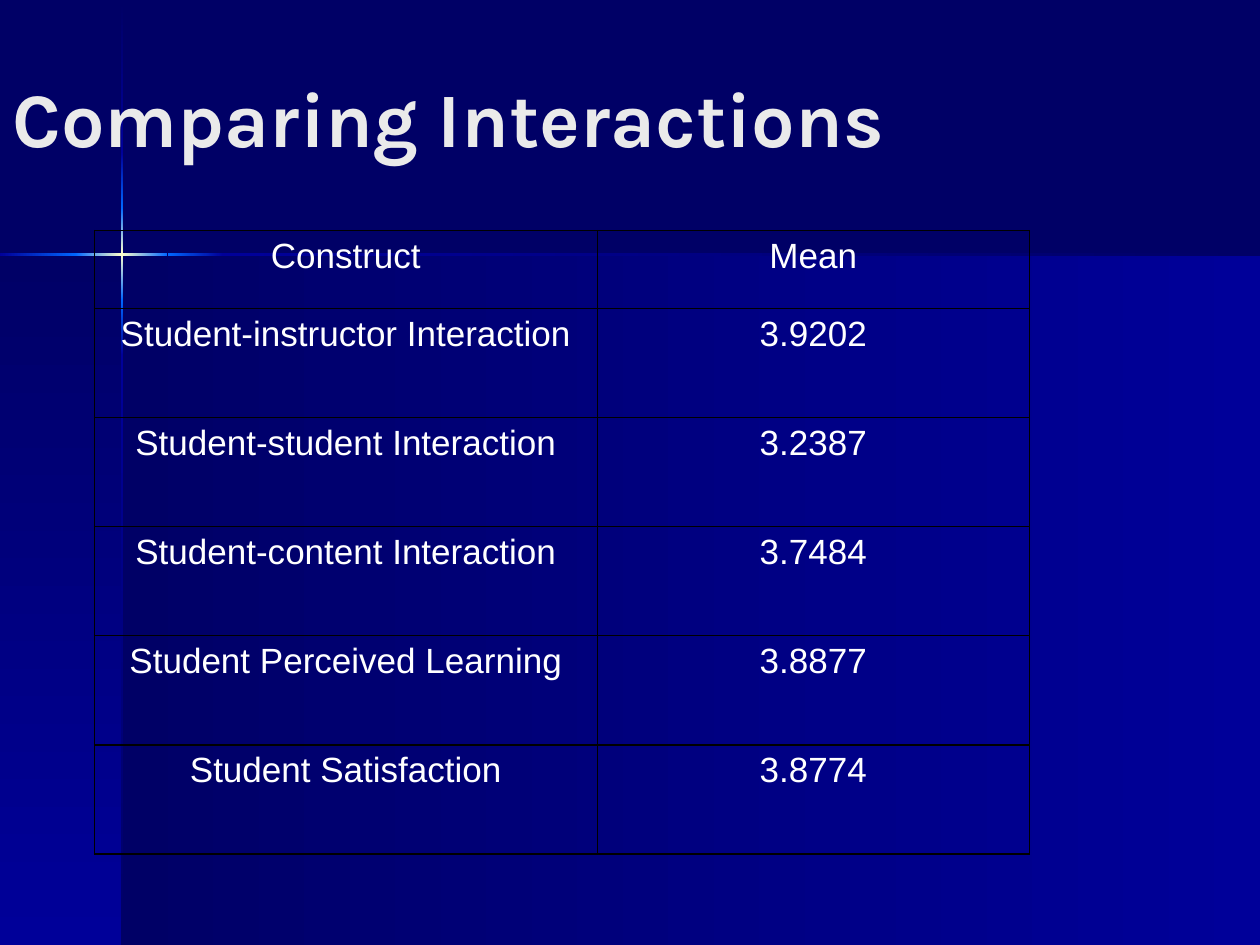
import copy
import pptx
import pptx.util
import pptx.dml.color
import pptx.enum.shapes
import pptx.enum.text
import pptx.oxml
import pptx.oxml.ns

Inches, Pt = pptx.util.Inches, pptx.util.Pt
RGB = pptx.dml.color.RGBColor

NAVY = RGB(0x00, 0x00, 0x66)
BLUE = RGB(0x00, 0x00, 0x99)
BRIGHT = RGB(0x00, 0x66, 0xFF)
GLOW = RGB(0xFF, 0xFF, 0xCC)
PALE = RGB(0xEA, 0xEA, 0xEA)
WHITE = RGB(0xFF, 0xFF, 0xFF)
BLACK = RGB(0x00, 0x00, 0x00)

TITLE = "Comparing Interactions"
ROWS = [
    ("Construct", "Mean"),
    ("Student-instructor Interaction", "3.9202"),
    ("Student-student Interaction", "3.2387"),
    ("Student-content Interaction", "3.7484"),
    ("Student Perceived Learning", "3.8877"),
    ("Student Satisfaction", "3.8774"),
]

WIDTH, HEIGHT = 10, 7.5
CROSS_X, CROSS_Y, BEAM = 0.97, 2.02, 0.02
VERTICAL_BEAM = [
    (0.01, 1.21, (NAVY, BLUE)),
    (2.82, HEIGHT, (BLUE, NAVY)),
    (2.38, 2.82, (BRIGHT, BLUE)),
    (1.21, 1.65, (BLUE, BRIGHT)),
    (1.65, 2.38, (BRIGHT, GLOW, BRIGHT)),
]
HORIZONTAL_BEAM = [
    (1.77, WIDTH, (BLUE, NAVY)),
    (0, 0.61, (BLUE, BRIGHT)),
    (1.33, 1.77, (BRIGHT, BLUE)),
    (0.6, 1.33, (BRIGHT, GLOW, BRIGHT)),
]

TABLE_LEFT, TABLE_TOP, TABLE_HEIGHT = 0.75, 1.83, 4.95
COLUMNS = [3.99, 3.43]
HEADER_HEIGHT = 0.62
BODY_HEIGHT = (TABLE_HEIGHT - HEADER_HEIGHT) / (len(ROWS) - 1)
HANGING = 0.38
SIDE_LINE = 0.75
ROW_LINES = [1, 1] + [0.75] * (len(ROWS) - 2) + [1]

TITLE_FONT = {"name": "Karla", "size": Pt(44), "bold": True}
CELL_FONT = {"name": "Arial", "size": Pt(20), "bold": False}


def format_run(r, values, color):
    for name, value in values.items():
        setattr(r.font, name, value)
    r.font.color.rgb = color


def add_gradient(s, box, colors, downward):
    sp = s.shapes.add_shape(
        pptx.enum.shapes.MSO_SHAPE.RECTANGLE, *map(Inches, box))
    sp.shadow.inherit = False
    sp.line.fill.background()
    sp.fill.gradient()
    stops = sp._element.xpath(".//a:gsLst")[0]
    while len(stops) < len(colors):
        stops.append(copy.deepcopy(stops[0]))
    for i, (stop, color) in enumerate(zip(sp.fill.gradient_stops, colors)):
        stop.color.rgb = color
        stop.position = i / (len(colors) - 1)
    sp.fill.gradient_angle = 270 if downward else 0


def add_border(cell, side, width):
    ns = pptx.oxml.ns.nsdecls("a")
    line = pptx.oxml.parse_xml(
        f'<a:{side} {ns} w="{Pt(width)}"><a:solidFill><a:srgbClr val="{BLACK}"/>'
        f'</a:solidFill><a:prstDash val="solid"/></a:{side}>')
    cell._tc.get_or_add_tcPr().append(line)


def fill_cell(cell, text, row):
    borders = {"lnL": SIDE_LINE, "lnR": SIDE_LINE,
               "lnT": ROW_LINES[row], "lnB": ROW_LINES[row + 1]}
    for side, width in borders.items():
        add_border(cell, side, width)
    cell.fill.background()
    p = cell.text_frame.paragraphs[0]
    p.alignment = pptx.enum.text.PP_ALIGN.CENTER
    pPr = p._p.get_or_add_pPr()
    pPr.set("marL", str(Inches(HANGING)))
    pPr.set("indent", str(-Inches(HANGING)))
    r = p.add_run()
    r.text = text
    format_run(r, CELL_FONT, WHITE)


def add_backdrop(s):
    s.background.fill.solid()
    s.background.fill.fore_color.rgb = NAVY
    depth = HEIGHT - CROSS_Y
    add_gradient(s, (CROSS_X, CROSS_Y, WIDTH - CROSS_X, depth), (NAVY, BLUE), False)
    add_gradient(s, (0, CROSS_Y, CROSS_X, depth), (NAVY, BLUE), True)
    for start, end, colors in VERTICAL_BEAM:
        add_gradient(s, (CROSS_X - BEAM / 2, start, BEAM, end - start), colors, True)
    for start, end, colors in HORIZONTAL_BEAM:
        add_gradient(s, (start, CROSS_Y - BEAM / 2, end - start, BEAM), colors, False)


def add_means_table(s):
    box = (TABLE_LEFT, TABLE_TOP, sum(COLUMNS), TABLE_HEIGHT)
    table = s.shapes.add_table(len(ROWS), len(COLUMNS), *map(Inches, box)).table
    table.first_row = table.horz_banding = False
    for column, width in zip(table.columns, COLUMNS):
        column.width = Inches(width)
    for i, texts in enumerate(ROWS):
        table.rows[i].height = Inches(BODY_HEIGHT if i else HEADER_HEIGHT)
        for j, text in enumerate(texts):
            fill_cell(table.cell(i, j), text, i)


def set_title(s):
    sp = s.shapes.title
    sp.left, sp.top, sp.width, sp.height = map(Inches, (0, 0.3, 9, 1.25))
    tf = sp.text_frame
    tf.word_wrap = True
    tf.auto_size = pptx.enum.text.MSO_AUTO_SIZE.NONE
    tf.vertical_anchor = pptx.enum.text.MSO_ANCHOR.MIDDLE
    p = tf.paragraphs[0]
    p.alignment = pptx.enum.text.PP_ALIGN.LEFT
    r = p.add_run()
    r.text = TITLE
    format_run(r, TITLE_FONT, PALE)
    s.shapes._spTree.append(sp._element)


def main():
    prs = pptx.Presentation()
    prs.slide_width, prs.slide_height = Inches(WIDTH), Inches(HEIGHT)
    s = prs.slides.add_slide(prs.slide_layouts[5])
    add_backdrop(s)
    add_means_table(s)
    set_title(s)
    prs.save("out.pptx")


if __name__ == "__main__":
    main()
